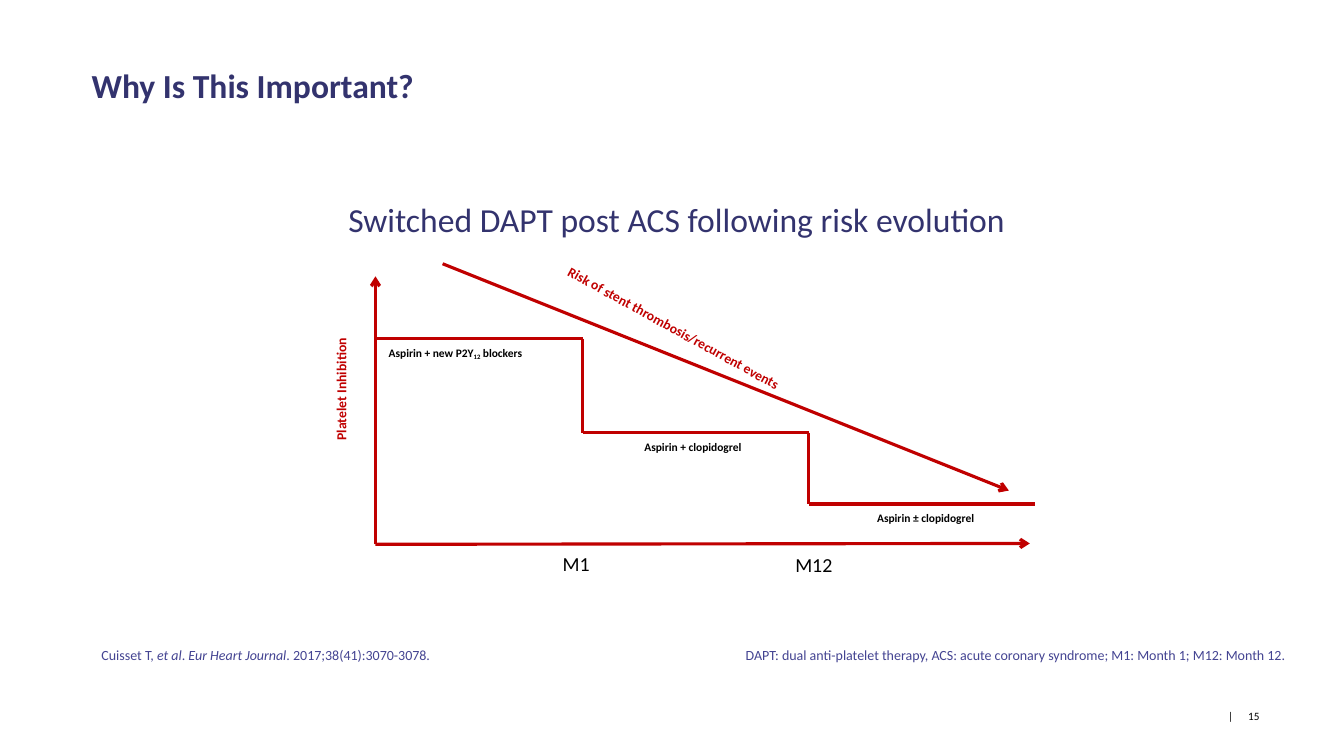
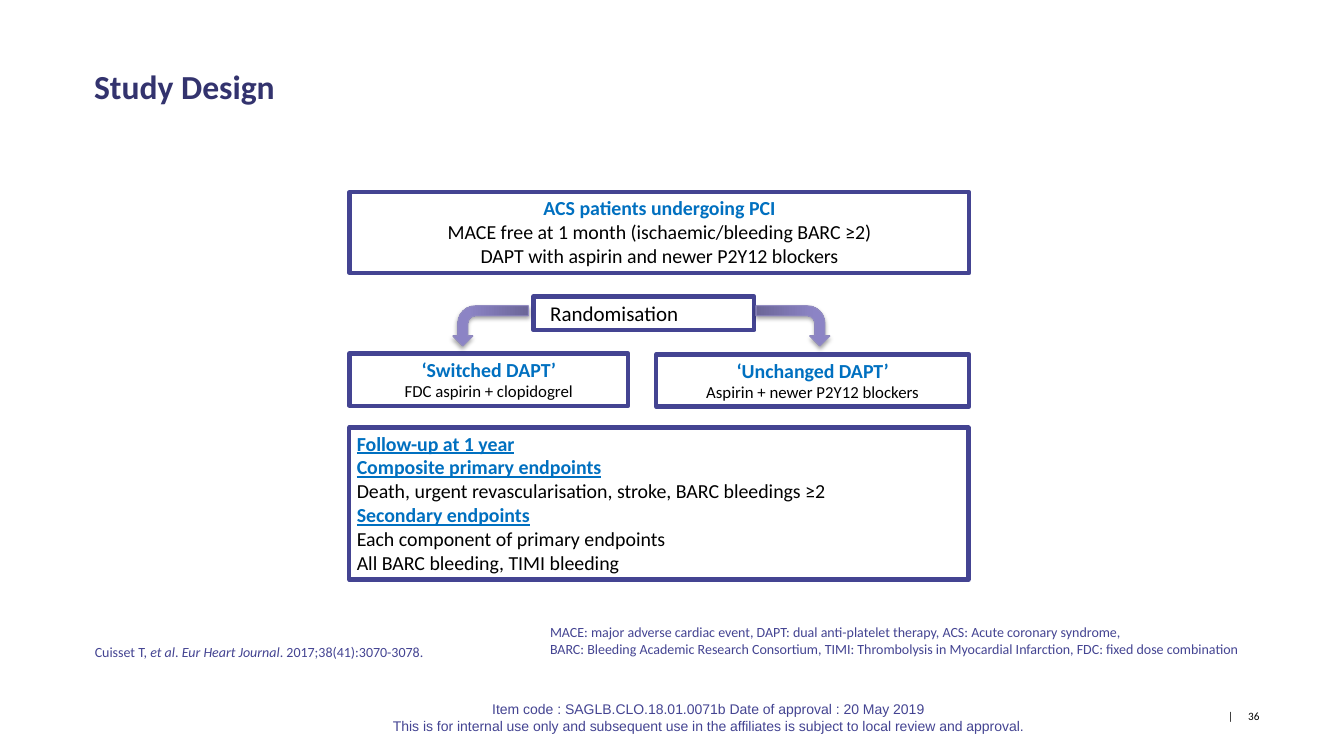
"""Build two slides on switched dual anti-platelet therapy: rationale and study design."""
from dataclasses import dataclass, replace
from itertools import pairwise

from lxml import etree
from pptx import Presentation
from pptx import util as u
from pptx.dml.color import RGBColor
from pptx.enum import shapes, text
from pptx.oxml import ns, parse_xml
from pptx.shapes.autoshape import Shape
from pptx.slide import Slide
from pptx.text.text import TextFrame

NAVY = RGBColor(0x33, 0x33, 0x6E)
INDIGO = RGBColor(0x44, 0x44, 0x92)
RED = RGBColor(0xC0, 0x00, 0x00)
BLUE = RGBColor(0x00, 0x70, 0xC0)
BLACK = RGBColor(0x00, 0x00, 0x00)
ARROW_DARK = RGBColor(0x6B, 0x66, 0x98)
ARROW_LIGHT = RGBColor(0x8C, 0x84, 0xC5)
ARROW_EDGE = RGBColor(0x92, 0x8C, 0xC1)

COLUMNS, ROWS = 160, 90
CELL = u.Inches(1 / 12)
LEFT, CENTER = text.PP_ALIGN.LEFT, text.PP_ALIGN.CENTER
TIGHT = (0.88, 0.44)
NORMAL = (1.2, 0.6)


@dataclass(frozen=True)
class Style:
    size: float
    color: RGBColor = BLACK
    bold: bool = False
    italic: bool = False
    underline: bool = False
    baseline: int = 0
    font: str = "Calibri"


@dataclass(frozen=True)
class Span:
    words: str
    style: Style


@dataclass(frozen=True)
class Area:
    left: float
    top: float
    width: float
    height: float


@dataclass(frozen=True)
class Label:
    area: Area
    paras: tuple[tuple[Span, ...], ...]
    align: text.PP_ALIGN = LEFT
    inset: tuple[float, float] = TIGHT
    rotation: float = 0


TITLE = Style(24, NAVY, bold=True)
HEADLINE = Style(24, NAVY)
STEP = Style(8.2, bold=True)
STEP_SUB = replace(STEP, baseline=-25000)
TREND = Style(9.8, RED, bold=True)
MONTH = Style(14.2)
NOTE = Style(10, INDIGO)
NOTE_ITALIC = replace(NOTE, italic=True)
APPROVAL = replace(NOTE, font="Arial")
NUMBER = Style(8)
BODY = Style(14.2)
DETAIL = Style(12)
HEADING = Style(14.2, BLUE, bold=True)
UNDERLINED = replace(HEADING, underline=True)

CITATION = (
    Span("Cuisset T, ", NOTE),
    Span("et al", NOTE_ITALIC),
    Span(". ", NOTE),
    Span("Eur Heart Journal", NOTE_ITALIC),
    Span(". 2017;38(41):3070-3078.", NOTE),
)


def cells(*counts: float) -> list[u.Emu]:
    return [u.Emu(round(count * CELL)) for count in counts]


def bounds(area: Area) -> list[u.Emu]:
    return cells(area.left, area.top, area.width, area.height)


def lines(style: Style, *rows: str) -> tuple[tuple[Span, ...], ...]:
    return tuple((Span(row, style),) for row in rows)


def fill_text(frame: TextFrame, label: Label) -> None:
    frame.word_wrap = True
    frame.vertical_anchor = text.MSO_ANCHOR.TOP
    frame.margin_left, frame.margin_top = cells(*label.inset)
    frame.margin_right, frame.margin_bottom = cells(*label.inset)
    for index, spans in enumerate(label.paras):
        para = frame.add_paragraph() if index else frame.paragraphs[0]
        para.alignment = label.align
        for part in spans:
            span = para.add_run()
            span.text = part.words
            style = part.style
            span.font.name = style.font
            span.font.size = u.Pt(style.size)
            span.font.color.rgb = style.color
            span.font.bold = style.bold
            span.font.italic = style.italic
            span.font.underline = style.underline
            if style.baseline:
                span._r.get_or_add_rPr().set("baseline", str(style.baseline))


def add_label(page: Slide, label: Label) -> Shape:
    box = page.shapes.add_textbox(*bounds(label.area))
    box.rotation = label.rotation
    fill_text(box.text_frame, label)
    return box


def add_panel(page: Slide, label: Label) -> None:
    box = page.shapes.add_shape(shapes.MSO_SHAPE.RECTANGLE, *bounds(label.area))
    box.shadow.inherit = False
    box.fill.background()
    box.line.color.rgb = INDIGO
    box.line.width = u.Pt(3)
    fill_text(box.text_frame, label)


def add_line(page: Slide, start: tuple[float, float], end: tuple[float, float], arrow: bool = False) -> None:
    line = page.shapes.add_connector(shapes.MSO_CONNECTOR.STRAIGHT, *cells(*start, *end))
    line.line.color.rgb = RED
    line.line.width = u.Pt(2.25)
    properties = line.element.spPr
    if arrow:
        etree.SubElement(properties.find(ns.qn("a:ln")), ns.qn("a:tailEnd"), type="arrow")
    etree.SubElement(properties, ns.qn("a:effectLst"))


def add_bent_arrow(page: Slide, area: Area, flipped: bool) -> None:
    arrow = page.shapes.add_shape(shapes.MSO_SHAPE.BENT_ARROW, *bounds(area))
    arrow.rotation = 90
    if flipped:
        arrow.element.spPr.xfrm.set("flipV", "1")
    arrow.fill.gradient()
    arrow.fill.gradient_angle = 90
    for stop, color, position in zip(arrow.fill.gradient_stops, (ARROW_DARK, ARROW_LIGHT), (0, 0.8)):
        stop.color.rgb = color
        stop.position = position
    arrow.line.color.rgb = ARROW_EDGE
    arrow.line.width = u.Pt(0.75)
    arrow.element.spPr.append(parse_xml(
        f'<a:effectLst {ns.nsdecls("a")}><a:outerShdw blurRad="{u.Pt(3.1)}" dist="{u.Pt(1.8)}" '
        'dir="5400000" rotWithShape="0"><a:srgbClr val="000000"><a:alpha val="35000"/>'
        '</a:srgbClr></a:outerShdw></a:effectLst>'
    ))


def add_page(deck: Presentation, title: str, number: int, title_left: float, title_top: float) -> Slide:
    page = deck.slides.add_slide(deck.slide_layouts[5])
    holder = page.shapes.title
    area = Area(title_left, title_top, 139.2, 11)
    holder.left, holder.top, holder.width, holder.height = bounds(area)
    frame = holder.text_frame
    fill_text(frame, Label(area, lines(TITLE, title), inset=(0, 0)))
    frame.auto_size = text.MSO_AUTO_SIZE.NONE
    frame.vertical_anchor = text.MSO_ANCHOR.MIDDLE
    frame.paragraphs[0].line_spacing = 0.9

    footer = add_label(page, Label(Area(146.2, 84.4, 6, 3.1), lines(NUMBER, f"|\t{number}"), inset=(0, 0)))
    properties = footer.text_frame.paragraphs[0]._p.get_or_add_pPr()
    tabs = etree.SubElement(properties, ns.qn("a:tabLst"))
    etree.SubElement(tabs, ns.qn("a:tab"), pos=str(cells(2.4)[0]), algn="l")
    return page


def add_rationale(deck: Presentation) -> None:
    page = add_page(deck, "Why Is This Important?", 15, 10.9, 4.9)
    origin = (44.7, 64.8)
    add_line(page, origin, (44.7, 32.9), arrow=True)
    add_line(page, origin, (122.6, 64.7), arrow=True)
    add_line(page, (52.7, 31.4), (120.1, 58.4), arrow=True)

    edges = (44.7, 69.4, 96.3, 123.2)
    levels = (40.3, 51.5, 60)
    corners = [(x, level) for level, ends in zip(levels, pairwise(edges)) for x in ends]
    for start, end in pairwise(corners):
        add_line(page, start, end)

    blockers = ((Span("Aspirin + new P2Y", STEP), Span("12", STEP_SUB), Span(" blockers", STEP)),)
    labels = (
        Label(Area(27.7, 23.2, 105.7, 5.8), lines(HEADLINE, "Switched DAPT post ACS following risk evolution"), CENTER),
        Label(Area(45.4, levels[0] + 0.4, 24, 2.5), blockers),
        Label(Area(70.8, levels[1] + 0.4, 23.4, 2.5), lines(STEP, "Aspirin + clopidogrel"), CENTER),
        Label(Area(98.5, levels[2] + 0.4, 23.4, 2.5), lines(STEP, "Aspirin ± clopidogrel"), CENTER),
        Label(Area(63.8, 42.8, 51.7, 2.9), lines(TREND, "Risk of stent thrombosis/recurrent events"), rotation=28.8),
        Label(Area(21.2, 44.9, 38.8, 2.9), lines(TREND, "Platelet Inhibition"), CENTER, rotation=270),
        Label(Area(66.1, 65.2, 8, 3.8), lines(MONTH, "M1")),
        Label(Area(93.8, 65.3, 8, 3.8), lines(MONTH, "M12")),
        Label(Area(87.6, 76.4, 71, 3.2), lines(
            NOTE, "DAPT: dual anti-platelet therapy, ACS: acute coronary syndrome; M1: Month 1; M12: Month 12."
        ), inset=NORMAL),
        Label(Area(10.9, 76.4, 46, 3.2), (CITATION,), inset=NORMAL),
    )
    for label in labels:
        add_label(page, label)


def add_study_design(deck: Presentation) -> None:
    page = add_page(deck, "Study Design", 36, 11.2, 5.1)
    panels = (
        Label(Area(41.6, 22.9, 73.8, 9.6), lines(HEADING, "ACS patients undergoing PCI") + lines(
            BODY,
            "MACE free at 1 month (ischaemic/bleeding BARC ≥2)",
            "DAPT with aspirin and newer P2Y12 blockers",
        ), CENTER),
        Label(Area(63.5, 35.3, 26.3, 4), lines(Style(15), "Randomisation"), inset=(2, 0.44)),
        Label(Area(41.6, 42.1, 33.2, 6.2),
              lines(HEADING, "‘Switched DAPT’") + lines(DETAIL, "FDC aspirin + clopidogrel"), CENTER),
        Label(Area(78.1, 42.2, 37.3, 6.2),
              lines(HEADING, "‘Unchanged DAPT’") + lines(DETAIL, "Aspirin + newer P2Y12 blockers"), CENTER),
        Label(Area(41.6, 50.9, 73.7, 18.1),
              lines(UNDERLINED, "Follow-up at 1 year", "Composite primary endpoints")
              + lines(BODY, "Death, urgent revascularisation, stroke, BARC bleedings ≥2")
              + lines(UNDERLINED, "Secondary endpoints")
              + lines(BODY, "Each component of primary endpoints", "All BARC bleeding, TIMI bleeding")),
    )
    for panel in panels:
        add_panel(page, panel)

    add_bent_arrow(page, Area(92, 34.4, 4.8, 8.8), flipped=False)
    add_bent_arrow(page, Area(56, 34.3, 4.8, 9), flipped=True)

    labels = (
        Label(Area(64.3, 73.6, 88, 5.3), lines(
            NOTE,
            "MACE: major adverse cardiac event, DAPT: dual anti-platelet therapy, ACS: Acute coronary syndrome,",
            "BARC: Bleeding Academic Research Consortium, TIMI: Thrombolysis in Myocardial Infarction, "
            "FDC: fixed dose combination",
        ), inset=NORMAL),
        Label(Area(10.1, 76, 46, 3.2), (CITATION,), inset=NORMAL),
        Label(Area(31.9, 82.8, 104.8, 5.3), lines(
            APPROVAL,
            "Item code : SAGLB.CLO.18.01.0071b Date of approval : 20 May 2019",
            "This is for internal use only and subsequent use in the affiliates "
            "is subject to local review and approval.",
        ), CENTER, NORMAL),
    )
    for label in labels:
        add_label(page, label)


def main() -> None:
    deck = Presentation()
    deck.slide_width, deck.slide_height = cells(COLUMNS, ROWS)
    add_rationale(deck)
    add_study_design(deck)
    deck.save("out.pptx")


if __name__ == "__main__":
    main()
